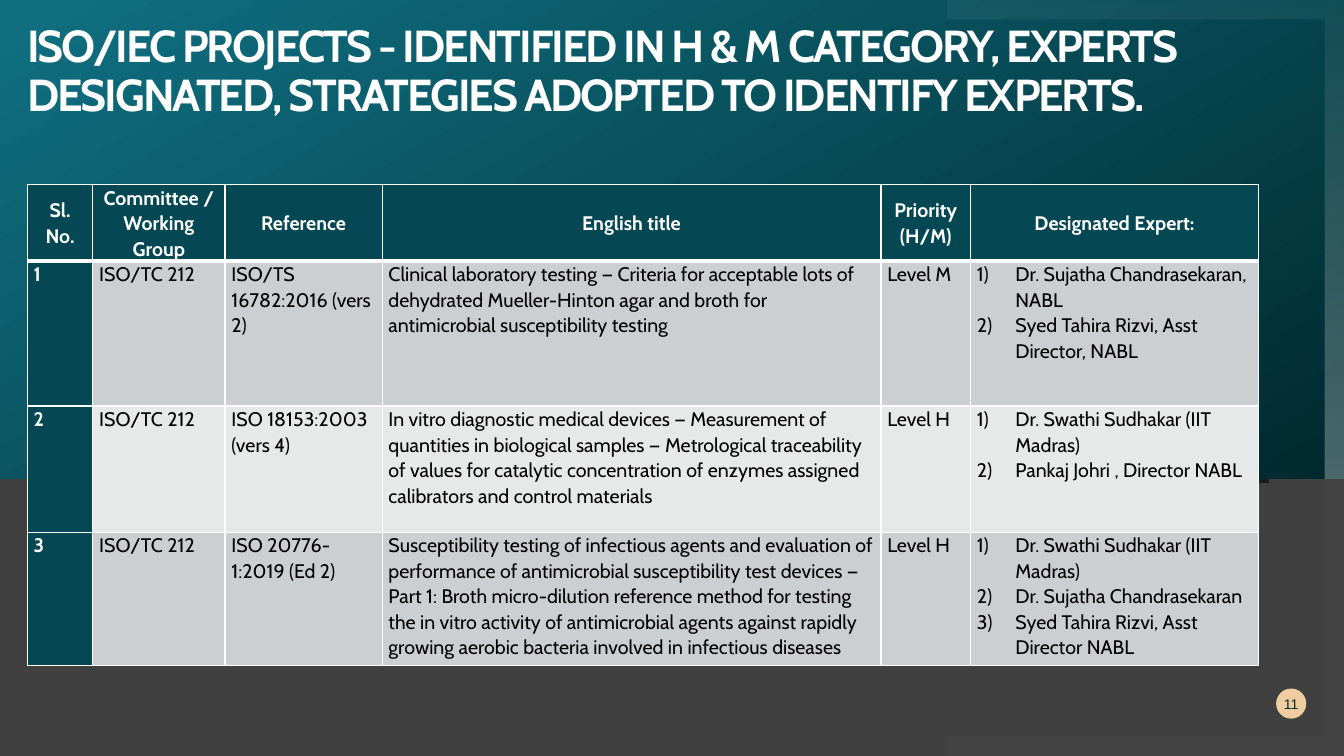
import pptx
import pptx.util
import pptx.dml.color
import pptx.enum.shapes
import pptx.enum.text
import pptx.oxml.ns
import lxml.etree

Cm, Pt = pptx.util.Cm, pptx.util.Pt
qn = pptx.oxml.ns.qn
SHAPE = pptx.enum.shapes.MSO_SHAPE
ALIGN = pptx.enum.text.PP_ALIGN
ANCHOR = pptx.enum.text.MSO_ANCHOR

# Content
TITLE = ("ISO/IEC PROJECTS - IDENTIFIED IN H & M CATEGORY, EXPERTS DESIGNATED, "
         "STRATEGIES ADOPTED TO IDENTIFY EXPERTS.")
PAGE = "11"
HEADS = ["Sl. No.", "Committee / Working Group", "Reference", "English title",
         "Priority (H/M)", "Designated Expert:"]
ROWS = [
    ["1", "ISO/TC 212", "ISO/TS 16782:2016 (vers 2)",
     "Clinical laboratory testing — Criteria for acceptable lots of dehydrated "
     "Mueller-Hinton agar and broth for antimicrobial susceptibility testing",
     "Level M",
     ["Dr. Sujatha Chandrasekaran, NABL", "Syed Tahira Rizvi, Asst Director, NABL"]],
    ["2", "ISO/TC 212", "ISO 18153:2003 (vers 4)",
     "In vitro diagnostic medical devices — Measurement of quantities in biological "
     "samples — Metrological traceability of values for catalytic concentration of "
     "enzymes assigned calibrators and control materials",
     "Level H",
     ["Dr. Swathi Sudhakar (IIT Madras)", "Pankaj Johri , Director NABL"]],
    ["3", "ISO/TC 212", "ISO 20776-1:2019 (Ed 2)",
     "Susceptibility testing of infectious agents and evaluation of performance of "
     "antimicrobial susceptibility test devices — Part 1: Broth micro-dilution "
     "reference method for testing the in vitro activity of antimicrobial agents "
     "against rapidly growing aerobic bacteria involved in infectious diseases",
     "Level H",
     ["Dr. Swathi Sudhakar (IIT Madras)", "Dr. Sujatha Chandrasekaran",
      "Syed Tahira Rizvi, Asst Director NABL"]],
]

# Look and measures, in cm
COLORS = {"back": "404040", "dark": "00292E", "teal": "107082", "head": "054854",
          "odd": "CCCFD1", "even": "E7E9E9", "badge": "F0CDA1", "gray": "808080",
          "white": "FFFFFF", "black": "000000"}
FONT = "Cabin"
WIDE, HIGH, SPLIT = 33.87, 19.05, 12.06
COLS = [1.65, 3.33, 3.96, 12.57, 2.26, 7.26]
TALL = [1.93, 3.65, 3.18, 3.35]
LEFT, TOP = 0.69, 4.65


def color(name):
    return pptx.dml.color.RGBColor.from_string(COLORS[name])


def paint(shape, name):
    shape.shadow.inherit = False
    shape.line.fill.background()
    shape.fill.solid()
    shape.fill.fore_color.rgb = color(name)


def blend(shape, names, angle):
    shape.fill.gradient()
    shape.fill.gradient_angle = angle
    for stop, name, place in zip(shape.fill.gradient_stops, names, (0, 1)):
        stop.color.rgb = color(name)
        stop.position = place


def fade(shape, *shares):
    tones = list(shape._element.spPr.iter(qn("a:srgbClr")))
    for tone, share in zip(tones, shares):
        lxml.etree.SubElement(tone, qn("a:alpha"), val=str(share * 1000))


def block(kind, x, y, w, h, name):
    shape = slide.shapes.add_shape(kind, Cm(x), Cm(y), Cm(w), Cm(h))
    paint(shape, name)
    return shape


def corner(edge, inner, end, name):
    """L-shaped band along the right side and one horizontal slide edge."""
    x, side = 23.88, 33.38
    spots = [(x, edge), (WIDE, edge), (WIDE, end), (side, end), (side, inner), (x, inner)]
    spots = [(Cm(a), Cm(b)) for a, b in spots]
    path = slide.shapes.build_freeform(*spots[0])
    path.add_line_segments(spots[1:], close=True)
    shape = path.convert_to_shape()
    paint(shape, name)
    return shape


def style(para, size, name, bold=False, font=FONT):
    para.font.size, para.font.name, para.font.bold = Pt(size), font, bold
    para.font.color.rgb = color(name)


def inset(box, x=0):
    box.margin_left = box.margin_right = Cm(x)
    box.margin_top = box.margin_bottom = 0


def border(cell, row):
    props = cell._tc.get_or_add_tcPr()
    for i, side in enumerate(("lnL", "lnR", "lnT", "lnB")):
        thick = (row, side) in ((0, "lnB"), (1, "lnT"))
        line = lxml.etree.Element(qn("a:" + side), w=str(Pt(3 if thick else 1)))
        fill = lxml.etree.SubElement(line, qn("a:solidFill"))
        lxml.etree.SubElement(fill, qn("a:srgbClr"), val=COLORS["white"])
        props.insert(i, line)


def number(para):
    props = para._p.get_or_add_pPr()
    props.set("marL", str(Cm(0.97)))
    props.set("indent", str(-Cm(0.97)))
    lxml.etree.SubElement(props, qn("a:buFont"), typeface="+mj-lt")
    lxml.etree.SubElement(props, qn("a:buAutoNum"), type="arabicParenR")


def write(cell, text, row, col):
    lead = row == 0 or col == 0
    cell.fill.solid()
    cell.fill.fore_color.rgb = color("head" if lead else "odd" if row % 2 else "even")
    border(cell, row)
    inset(cell, 0.16)
    cell.vertical_anchor = ANCHOR.TOP if row else ANCHOR.MIDDLE
    listed = isinstance(text, list)
    cell.text_frame.text = "\n".join(text) if listed else text
    paras = cell.text_frame.paragraphs
    for para in paras:
        para.line_spacing = 1.07
        para.space_after = Pt(8 if para is paras[-1] else 0)
        para.alignment = ALIGN.LEFT if row else ALIGN.CENTER
        if listed:
            number(para)
        style(para, 14, "white" if lead else "black", lead)


deck = pptx.Presentation()
deck.slide_width, deck.slide_height = Cm(WIDE), Cm(HIGH)
slide = deck.slides.add_slide(deck.slide_layouts[6])
slide.background.fill.solid()
slide.background.fill.fore_color.rgb = color("back")

# Backdrop
fade(block(SHAPE.RECTANGLE, 1.88, 12.04, 30.1, 0.13, "black"), 56)
blend(block(SHAPE.RECTANGLE, 0, 0, WIDE, SPLIT, "dark"), ("dark", "teal"), 120)
upper = corner(0, 0.5, SPLIT, "white")
blend(upper, ("white", "white"), 270)
fade(upper, 5, 30)
fade(corner(HIGH, HIGH - 0.5, SPLIT, "gray"), 5)

# Page badge
badge = block(SHAPE.OVAL, 32.16, 17.35, 0.76, 0.76, "badge")
frame = badge.text_frame
inset(frame)
frame.word_wrap = False
frame.vertical_anchor = ANCHOR.MIDDLE
frame.text = PAGE
frame.paragraphs[0].alignment = ALIGN.CENTER
style(frame.paragraphs[0], 10, "dark", font="Arial")

# Title
frame = slide.shapes.add_textbox(Cm(LEFT), Cm(0.61), Cm(32.23), Cm(2.44)).text_frame
inset(frame)
frame.word_wrap = True
frame.text = TITLE
para = frame.paragraphs[0]
para.line_spacing = 0.9
style(para, 32, "white", True)
para.runs[0].font._element.set("spc", "-150")

# Project table
table = slide.shapes.add_table(len(TALL), len(COLS), Cm(LEFT), Cm(TOP),
                               Cm(sum(COLS)), Cm(sum(TALL))).table
table.horz_banding = False
for col, width in enumerate(COLS):
    table.columns[col].width = Cm(width)
for row, texts in enumerate([HEADS] + ROWS):
    table.rows[row].height = Cm(TALL[row])
    for col, text in enumerate(texts):
        write(table.cell(row, col), text, row, col)

deck.save("out.pptx")
